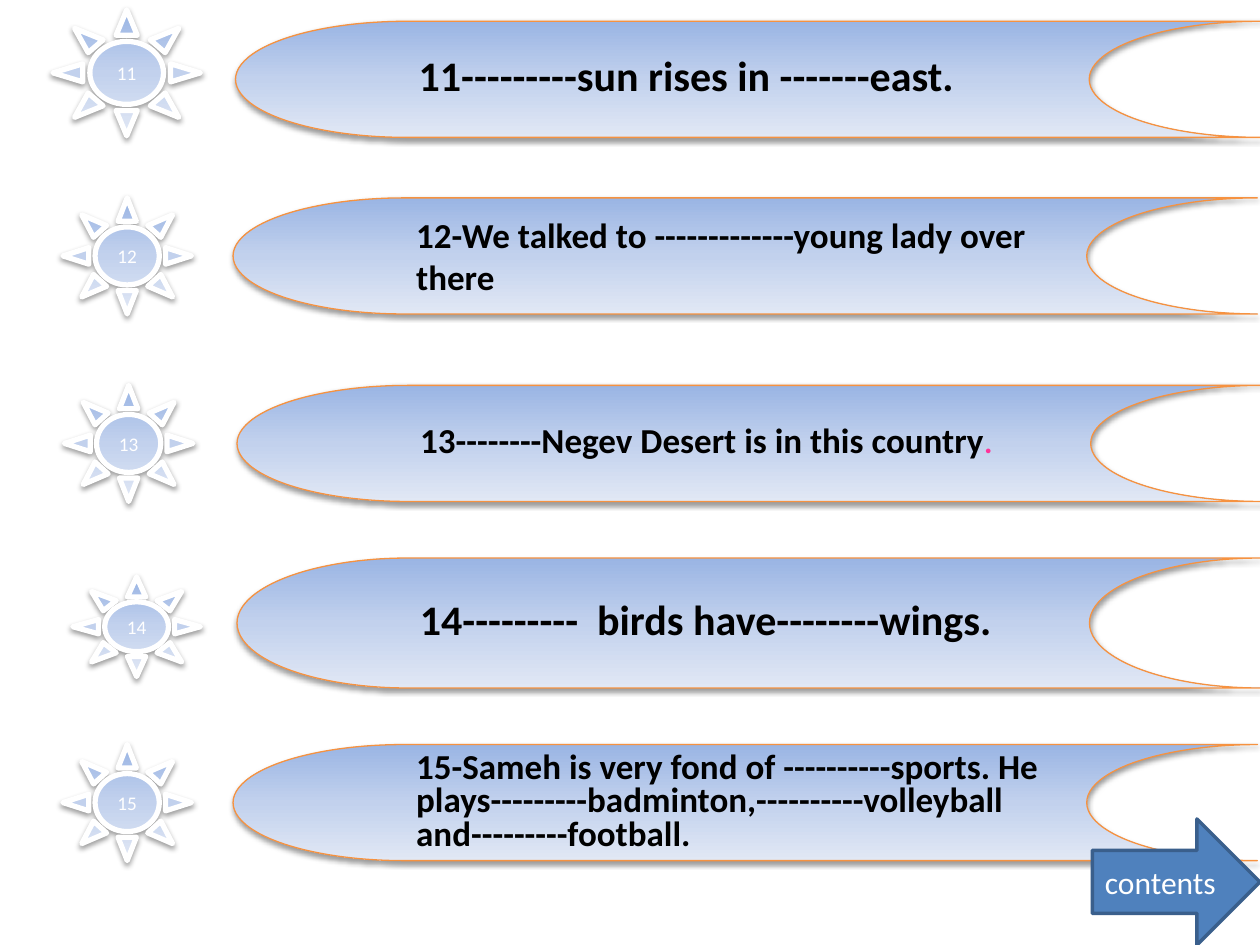
from copy import deepcopy
from dataclasses import dataclass

import pptx
import pptx.dml.color
import pptx.enum.shapes
import pptx.enum.text
import pptx.oxml
import pptx.oxml.ns
import pptx.util
from pptx.dml.color import RGBColor
from pptx.util import Cm, Pt

BLACK = RGBColor(0x00, 0x00, 0x00)
WHITE = RGBColor(0xFF, 0xFF, 0xFF)
PINK = RGBColor(0xFF, 0x33, 0x99)
ORANGE = RGBColor(0xF6, 0x92, 0x40)
BLUE = RGBColor(0x4F, 0x81, 0xBD)
DARK_BLUE = RGBColor(0x3A, 0x5F, 0x8C)
PALE_BLUES = (
    RGBColor(0x9A, 0xB5, 0xE4),
    RGBColor(0xC2, 0xD1, 0xED),
    RGBColor(0xE1, 0xE8, 0xF5),
)
SHAPES = pptx.enum.shapes.MSO_SHAPE
ALIGN = pptx.enum.text.PP_ALIGN

SHADOW = (
    f'<a:outerShdw {pptx.oxml.ns.nsdecls("a")} blurRad="40000" dist="20000" '
    'dir="5400000" rotWithShape="0"><a:srgbClr val="000000">'
    '<a:alpha val="38000"/></a:srgbClr></a:outerShdw>'
)


@dataclass
class Box:
    """Left, top, width and height in centimetres."""
    left: float
    top: float
    width: float
    height: float


@dataclass
class Question:
    number: int
    sentence: str
    banner: Box
    sun: Box
    size: int = 20
    line_spacing: float | None = 0.8
    pink_ending: str = ""


QUESTIONS = [
    Question(11, "11---------sun rises in -------east.",
             Box(4.75, 0.43, 20.65, 2.34), Box(1.07, 0.2, 2.97, 2.54), size=24),
    Question(12, "12-We talked to -------------young lady over there",
             Box(4.7, 3.99, 20.65, 2.34), Box(1.27, 3.99, 2.59, 2.34),
             line_spacing=None),
    Question(13, "13--------Negev Desert is in this country",
             Box(4.78, 7.77, 20.65, 2.34), Box(1.3, 7.77, 2.59, 2.34),
             pink_ending="."),
    Question(14, "14---------  birds have--------wings.",
             Box(4.78, 11.25, 20.62, 2.62), Box(1.47, 11.63, 2.57, 2.01), size=24),
    Question(15, "15-Sameh is very fond of ----------sports. He "
                 "plays---------badminton,----------volleyball "
                 "and---------football.",
             Box(4.7, 15.01, 20.65, 2.34), Box(1.27, 15.01, 2.59, 2.34)),
]


def add_labelled(slide, kind, box: Box, text: str, size: int, colour: RGBColor,
                 line_colour: RGBColor, line_width: float, align=ALIGN.CENTER):
    shape = slide.shapes.add_shape(
        kind, Cm(box.left), Cm(box.top), Cm(box.width), Cm(box.height))
    shape.shadow.inherit = False
    shape.line.color.rgb = line_colour
    shape.line.width = Pt(line_width)
    shape.text_frame.word_wrap = True
    shape.text_frame.vertical_anchor = pptx.enum.text.MSO_ANCHOR.MIDDLE
    paragraph = shape.text_frame.paragraphs[0]
    paragraph.alignment = align
    paragraph.font.name = "Calibri"
    paragraph.font.size = Pt(size)
    paragraph.font.color.rgb = colour
    paragraph.add_run().text = text
    return shape


def add_glow_finish(shape) -> None:
    """Give the shape the pale blue gradient and the soft shadow below it."""
    shape.fill.gradient()
    shape.fill.gradient_angle = 270
    properties = shape._element.spPr
    stop_list = properties.find(".//" + pptx.oxml.ns.qn("a:gsLst"))
    stop_list.append(deepcopy(stop_list[0]))
    for index, (stop, blue) in enumerate(zip(shape.fill.gradient_stops, PALE_BLUES)):
        stop.position = index / 2
        stop.color.rgb = blue
    effects = properties.find(pptx.oxml.ns.qn("a:effectLst"))
    effects.append(pptx.oxml.parse_xml(SHADOW))


def add_banner(slide, question: Question) -> None:
    banner = add_labelled(
        slide, SHAPES.FLOWCHART_STORED_DATA, question.banner, question.sentence,
        question.size, BLACK, ORANGE, 0.75, ALIGN.LEFT)
    add_glow_finish(banner)
    sentence = banner.text_frame.paragraphs[0]
    sentence.font.bold = True
    if question.line_spacing:
        sentence.line_spacing = question.line_spacing
    if question.pink_ending:
        ending = sentence.add_run()
        ending.text = question.pink_ending
        ending.font.size = Pt(18)
        ending.font.color.rgb = PINK


def add_sun(slide, question: Question) -> None:
    sun = add_labelled(slide, SHAPES.SUN, question.sun, str(question.number),
                       11, WHITE, WHITE, 3)
    add_glow_finish(sun)


def main() -> None:
    deck = pptx.Presentation()
    deck.slide_width, deck.slide_height = Cm(25.4), Cm(19.05)
    slide = deck.slides.add_slide(deck.slide_layouts[6])
    for question in QUESTIONS:
        add_banner(slide, question)
    for question in QUESTIONS:
        add_sun(slide, question)
    contents = add_labelled(slide, SHAPES.RIGHT_ARROW, Box(22.02, 16.51, 3.38, 2.54),
                            "contents", 18, WHITE, DARK_BLUE, 2)
    contents.fill.solid()
    contents.fill.fore_color.rgb = BLUE
    deck.save("out.pptx")


if __name__ == "__main__":
    main()
